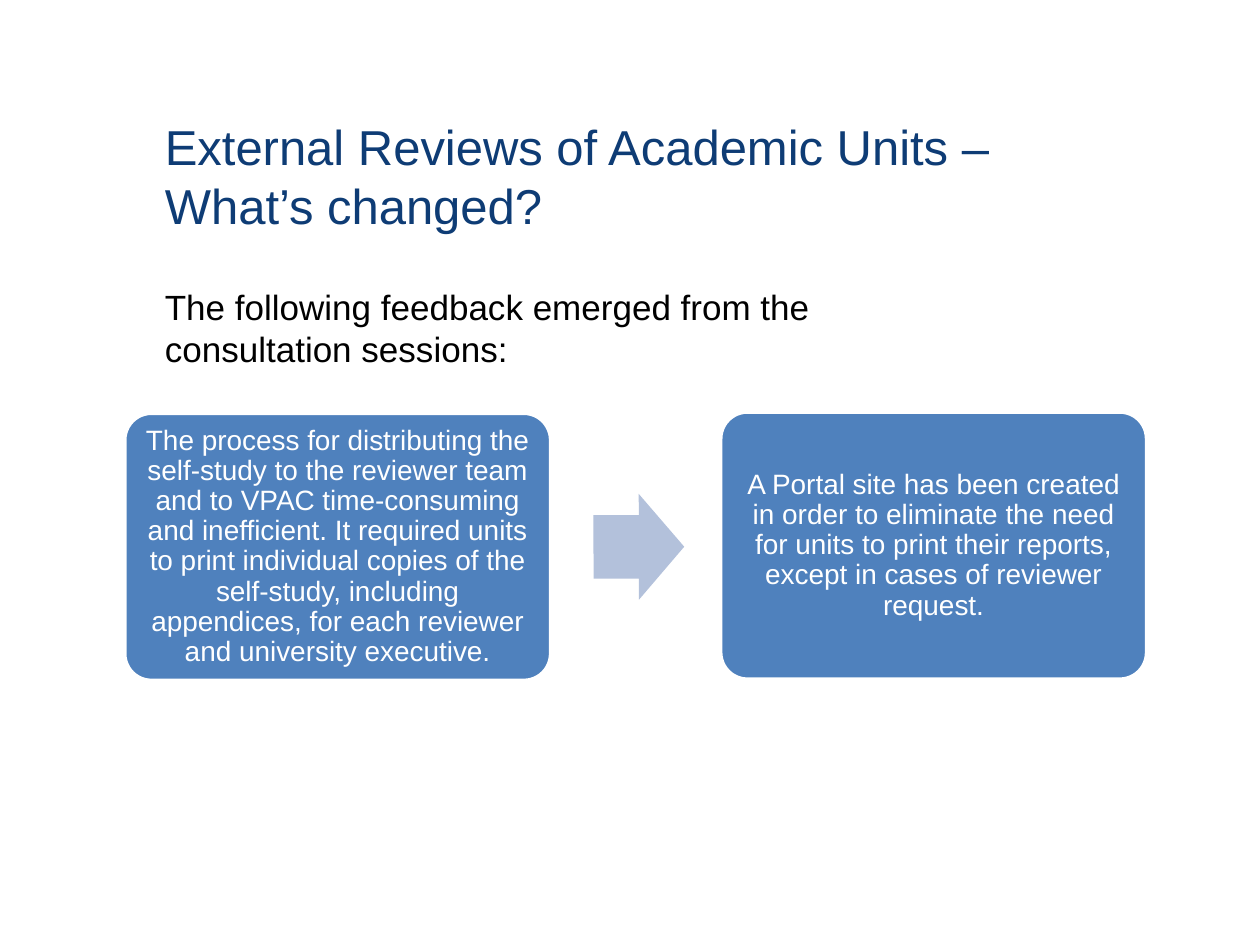
import pptx
import pptx.dml.color
import pptx.enum.shapes
import pptx.enum.text
import pptx.util

Inches = pptx.util.Inches
Pt = pptx.util.Pt
RGBColor = pptx.dml.color.RGBColor
MSO_SHAPE = pptx.enum.shapes.MSO_SHAPE
MSO_ANCHOR = pptx.enum.text.MSO_ANCHOR
PP_ALIGN = pptx.enum.text.PP_ALIGN

NAVY = RGBColor(0x0E, 0x3C, 0x75)
BLACK = RGBColor(0, 0, 0)
WHITE = RGBColor(0xFF, 0xFF, 0xFF)
BLUE = RGBColor(0x4F, 0x81, 0xBD)
PALE_BLUE = RGBColor(0xB3, 0xC1, 0xDB)


class SlideBuilder:
    """Hold the font and the current slide, and add its elements."""

    def __init__(self, slide, font="Arial"):
        self.slide = slide
        self.font = font

    def text(self, text, left, top, width, height, size, color,
             anchor=MSO_ANCHOR.TOP):
        sp = self.slide.shapes.add_textbox(
            Inches(left), Inches(top), Inches(width), Inches(height))
        tf = sp.text_frame
        tf.word_wrap = True
        tf.vertical_anchor = anchor
        tf.text = text
        p = tf.paragraphs[0]
        for r in p.runs:
            r.font.name = self.font
            r.font.size = Pt(size)
            r.font.color.rgb = color
        return sp

    def shape(self, kind, left, top, width, height, fill, adjustments):
        sp = self.slide.shapes.add_shape(
            kind, Inches(left), Inches(top), Inches(width), Inches(height))
        sp.shadow.inherit = False
        sp.fill.solid()
        sp.fill.fore_color.rgb = fill
        sp.line.fill.background()
        for i, value in enumerate(adjustments):
            sp.adjustments[i] = value
        return sp

    def card(self, text, left, top, width=3.38, height=2.12, pad=0.06):
        sp = self.shape(MSO_SHAPE.ROUNDED_RECTANGLE, left, top, width, height,
                        BLUE, [0.1])
        sp.line.color.rgb = WHITE
        sp.line.width = Pt(2)
        label = self.text(text, left + pad, top + pad, width - 2 * pad,
                          height - 2 * pad, 16, WHITE, MSO_ANCHOR.MIDDLE)
        tf = label.text_frame
        tf.margin_left = tf.margin_right = Inches(0.07)
        tf.margin_top = tf.margin_bottom = Inches(0.07)
        p = tf.paragraphs[0]
        p.alignment = PP_ALIGN.CENTER
        p.line_spacing = 0.9

    def arrow(self, left, top, width, height):
        sp = self.shape(MSO_SHAPE.RIGHT_ARROW, left, top, width, height,
                        PALE_BLUE, [0.6, 0.5])
        sp.rotation = 359.9


def main():
    prs = pptx.Presentation()
    prs.slide_width = Inches(10)
    prs.slide_height = Inches(7.5)
    s = SlideBuilder(prs.slides.add_slide(prs.slide_layouts[6]))

    s.text("External Reviews of Academic Units – What’s changed?",
           1.21, 0.77, 6.85, 1.25, 28, NAVY, MSO_ANCHOR.MIDDLE)
    s.text("The following feedback emerged from the consultation sessions:",
           1.21, 2.22, 6.85, 0.85, 20, BLACK)
    s.card("The process for distributing the self-study to the reviewer team "
           "and to VPAC time-consuming and inefficient. It required units to "
           "print individual copies of the self-study, including appendices, "
           "for each reviewer and university executive.", 0.99, 3.28)
    s.arrow(4.71, 3.92, 0.72, 0.84)
    s.card("A Portal site has been created in order to eliminate the need for "
           "units to print their reports, except in cases of reviewer "
           "request.", 5.72, 3.27)

    prs.save("out.pptx")


if __name__ == "__main__":
    main()
